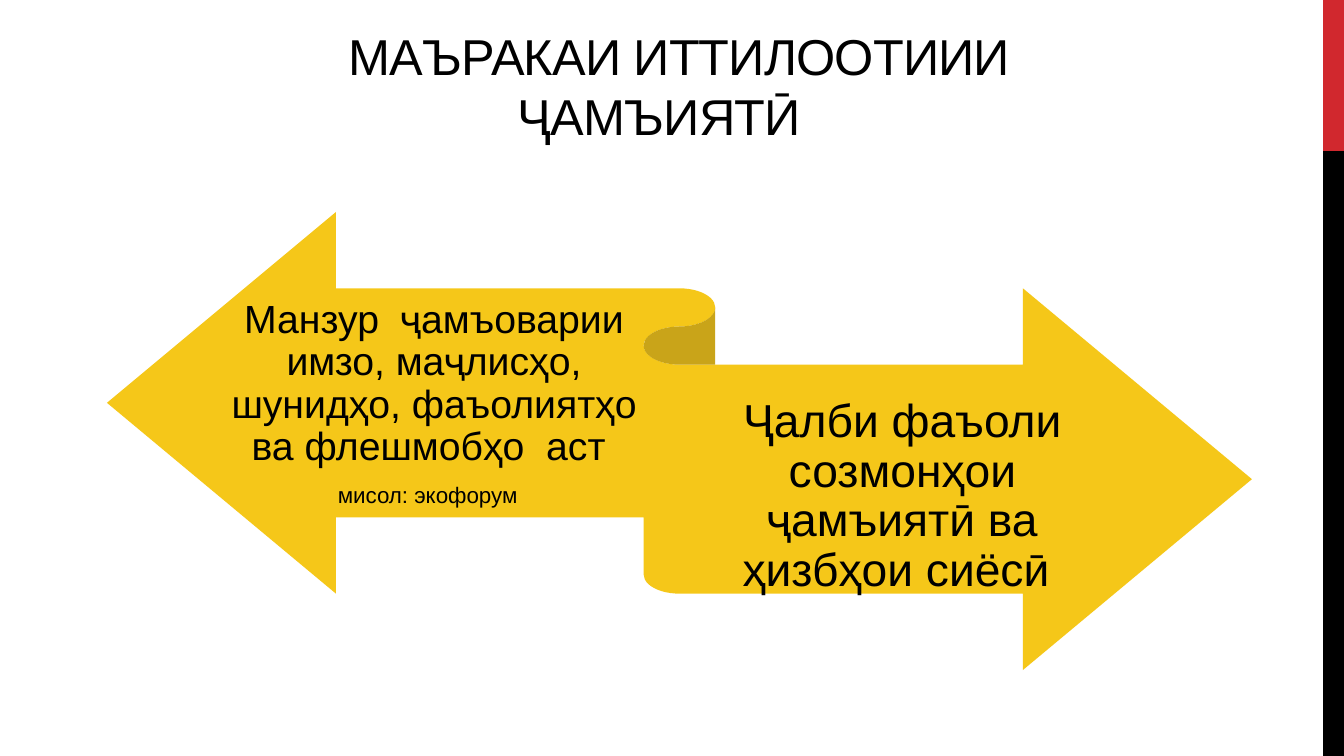
from dataclasses import dataclass

from lxml import etree
from pptx import Presentation
from pptx.dml.color import RGBColor
from pptx.enum.shapes import MSO_SHAPE
from pptx.enum.text import MSO_ANCHOR, MSO_AUTO_SIZE, PP_ALIGN
from pptx.oxml.ns import qn
from pptx.util import Inches, Pt

RECTANGLE = MSO_SHAPE.RECTANGLE
RIBBON = MSO_SHAPE.LEFT_RIGHT_RIBBON
MIDDLE, BOTTOM = MSO_ANCHOR.MIDDLE, MSO_ANCHOR.BOTTOM
CENTER = PP_ALIGN.CENTER
NO_AUTOFIT = MSO_AUTO_SIZE.NONE

TITLE_ONLY = 5
PX_PER_INCH = 100.8
PAGE_WIDTH, PAGE_HEIGHT = 1344, 756
BAR_WIDTH, BAR_SPLIT = 21, 151


@dataclass(frozen=True)
class Theme:
    font: str = "Arial"
    text: RGBColor = RGBColor(0x00, 0x00, 0x00)
    accent: RGBColor = RGBColor(0xD1, 0x28, 0x2E)
    bar: RGBColor = RGBColor(0x00, 0x00, 0x00)
    ribbon: RGBColor = RGBColor(0xF5, 0xC2, 0x01)
    ribbon_opacity: int = 90
    title_size: int = 36
    title_spacing: float = -0.6
    left_size: int = 28
    example_size: int = 16
    right_size: int = 33


THEME = Theme()


def px(length):
    return round(length * Inches(1) / PX_PER_INCH)


def style_paragraph(para, text, size):
    para.text = text
    para.alignment = CENTER
    para.font.name = THEME.font
    para.font.size = Pt(size)
    para.font.color.rgb = THEME.text


def add_filled_shape(page, kind, bounds, color, opacity=100):
    shape = page.shapes.add_shape(kind, *map(px, bounds))
    shape.shadow.inherit = False
    shape.line.fill.background()
    shape.fill.solid()
    shape.fill.fore_color.rgb = color
    if opacity < 100:
        color_node = shape.fill._xPr.find(qn("a:solidFill"))[0]
        etree.SubElement(color_node, qn("a:alpha"), val=str(opacity * 1000))


def set_title(page, text, bounds):
    title = page.shapes.title
    title.left, title.top, title.width, title.height = map(px, bounds)
    frame = title.text_frame
    frame.word_wrap = True
    frame.auto_size = NO_AUTOFIT
    frame.vertical_anchor = BOTTOM
    para = frame.paragraphs[0]
    style_paragraph(para, text, THEME.title_size)
    # Letter spacing is in hundredths of a point
    for span in para.runs:
        span.font._element.set("spc", str(round(THEME.title_spacing * 100)))


def add_arrow_text(page, bounds, inset_top, inset_bottom, lines):
    box = page.shapes.add_textbox(*map(px, bounds))
    frame = box.text_frame
    frame.word_wrap = True
    frame.vertical_anchor = MIDDLE
    frame.margin_left = frame.margin_right = 0
    frame.margin_top, frame.margin_bottom = px(inset_top), px(inset_bottom)
    for index, (text, size) in enumerate(lines):
        para = frame.add_paragraph() if index else frame.paragraphs[0]
        style_paragraph(para, text, size)
        para.line_spacing = 0.9
        para.space_after = Pt(round(size * 0.4))


def main():
    deck = Presentation()
    deck.slide_width, deck.slide_height = px(PAGE_WIDTH), px(PAGE_HEIGHT)
    page = deck.slides.add_slide(deck.slide_layouts[TITLE_ONLY])

    # Side bar
    bar_left = PAGE_WIDTH - BAR_WIDTH
    add_filled_shape(page, RECTANGLE, (bar_left, 0, BAR_WIDTH, BAR_SPLIT), THEME.accent)
    add_filled_shape(page, RECTANGLE,
                     (bar_left, BAR_SPLIT, BAR_WIDTH, PAGE_HEIGHT - BAR_SPLIT), THEME.bar)

    # Title
    set_title(page, " МАЪРАКАИ ИТТИЛООТИИИ ҶАМЪИЯТӢ  ", (247, 0, 851, 151))

    # Two-way ribbon with a text on each arrow
    add_filled_shape(page, RIBBON, (107, 212, 1145, 458), THEME.ribbon, THEME.ribbon_opacity)
    add_arrow_text(page, (211, 281, 446, 247), 11, 12, [
        ("Манзур  ҷамъоварии имзо, маҷлисҳо, шунидҳо, фаъолиятҳо ва флешмобҳо  аст ",
         THEME.left_size),
        ("мисол: экофорум  ", THEME.example_size),
    ])
    add_arrow_text(page, (679, 385, 447, 225), 13, 14, [
        ("Ҷалби фаъоли созмонҳои ҷамъиятӣ ва ҳизбҳои сиёсӣ ", THEME.right_size),
    ])

    deck.save("out.pptx")


if __name__ == "__main__":
    main()
